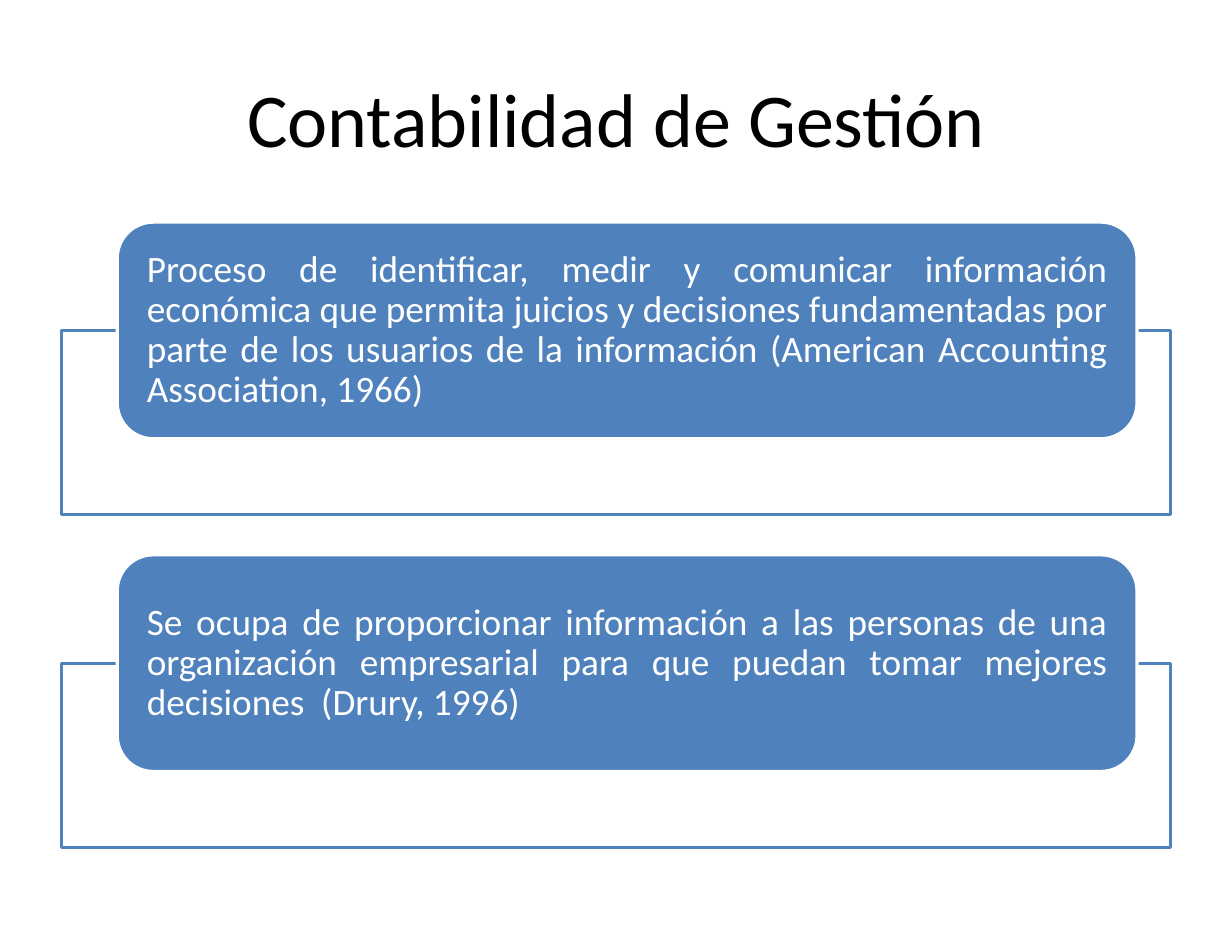
from dataclasses import dataclass

from lxml.etree import SubElement
from pptx import Presentation
from pptx.dml.color import RGBColor
from pptx.enum.shapes import MSO_SHAPE
from pptx.enum.text import MSO_ANCHOR, MSO_AUTO_SIZE, PP_ALIGN
from pptx.oxml.ns import qn
from pptx.shapes.autoshape import Shape
from pptx.slide import Slide
from pptx.text.text import TextFrame
from pptx.util import Inches, Pt

COLORS = {"blue": "4F81BD", "white": "FFFFFF", "black": "000000"}
FONT = "Calibri"
LEFT, WIDTH = 0.55, 9.93
FIRST, STEP = 1.99, 2.98


@dataclass(frozen=True)
class Panel:
    top: float
    text: str


TEXTS = (
    "Proceso de identificar, medir y comunicar información económica que permita "
    "juicios y decisiones fundamentadas por parte de los usuarios de la información "
    "(American Accounting Association, 1966)",
    "Se ocupa de proporcionar información a las personas de una organización "
    "empresarial para que puedan tomar mejores decisiones  (Drury, 1996)",
)
PANELS = [Panel(FIRST + i * STEP, text) for i, text in enumerate(TEXTS)]


def color(name: str) -> RGBColor:
    return RGBColor.from_string(COLORS[name])


def write(frame: TextFrame, text: str, size: int, tint: str, align: PP_ALIGN,
          side: float, edge: float) -> None:
    frame.word_wrap = True
    frame.auto_size = MSO_AUTO_SIZE.NONE
    frame.vertical_anchor = MSO_ANCHOR.MIDDLE
    frame.margin_left = frame.margin_right = Inches(side)
    frame.margin_top = frame.margin_bottom = Inches(edge)
    para = frame.paragraphs[0]
    para.alignment = align
    run = para.add_run()
    run.text = text
    run.font.name = FONT
    run.font.size = Pt(size)
    run.font.color.rgb = color(tint)


def add_box(slide: Slide, kind: MSO_SHAPE, left: float, top: float,
            width: float, height: float, fill: str, line: str) -> Shape:
    box = slide.shapes.add_shape(
        kind, Inches(left), Inches(top), Inches(width), Inches(height))
    box.shadow.inherit = False
    box.fill.solid()
    box.fill.fore_color.rgb = color(fill)
    box.line.color.rgb = color(line)
    box.line.width = Pt(2)
    return box


def add_panel(slide: Slide, panel: Panel) -> None:
    frame = add_box(slide, MSO_SHAPE.RECTANGLE, LEFT, panel.top + 0.97,
                    WIDTH, 1.65, "white", "blue")
    tint = frame.fill._xPr.find(qn("a:solidFill"))[0]
    SubElement(tint, qn("a:alpha"), val="90000")
    card = add_box(slide, MSO_SHAPE.ROUNDED_RECTANGLE, 1.05, panel.top,
                   9.13, 1.94, "blue", "white")
    write(card.text_frame, panel.text, 24, "white", PP_ALIGN.JUSTIFY, 0.17, 0)
    card.text_frame.paragraphs[0].line_spacing = 0.9


def main() -> None:
    deck = Presentation()
    deck.slide_width, deck.slide_height = Inches(11.03), Inches(8.5)
    slide = deck.slides.add_slide(deck.slide_layouts[5])
    title = slide.shapes.title
    title.left, title.top = Inches(LEFT), Inches(0.34)
    title.width, title.height = Inches(WIDTH), Inches(1.42)
    write(title.text_frame, "Contabilidad de Gestión", 49, "black",
          PP_ALIGN.CENTER, 0.11, 0.06)
    for panel in PANELS:
        add_panel(slide, panel)
    deck.save("out.pptx")


if __name__ == "__main__":
    main()
